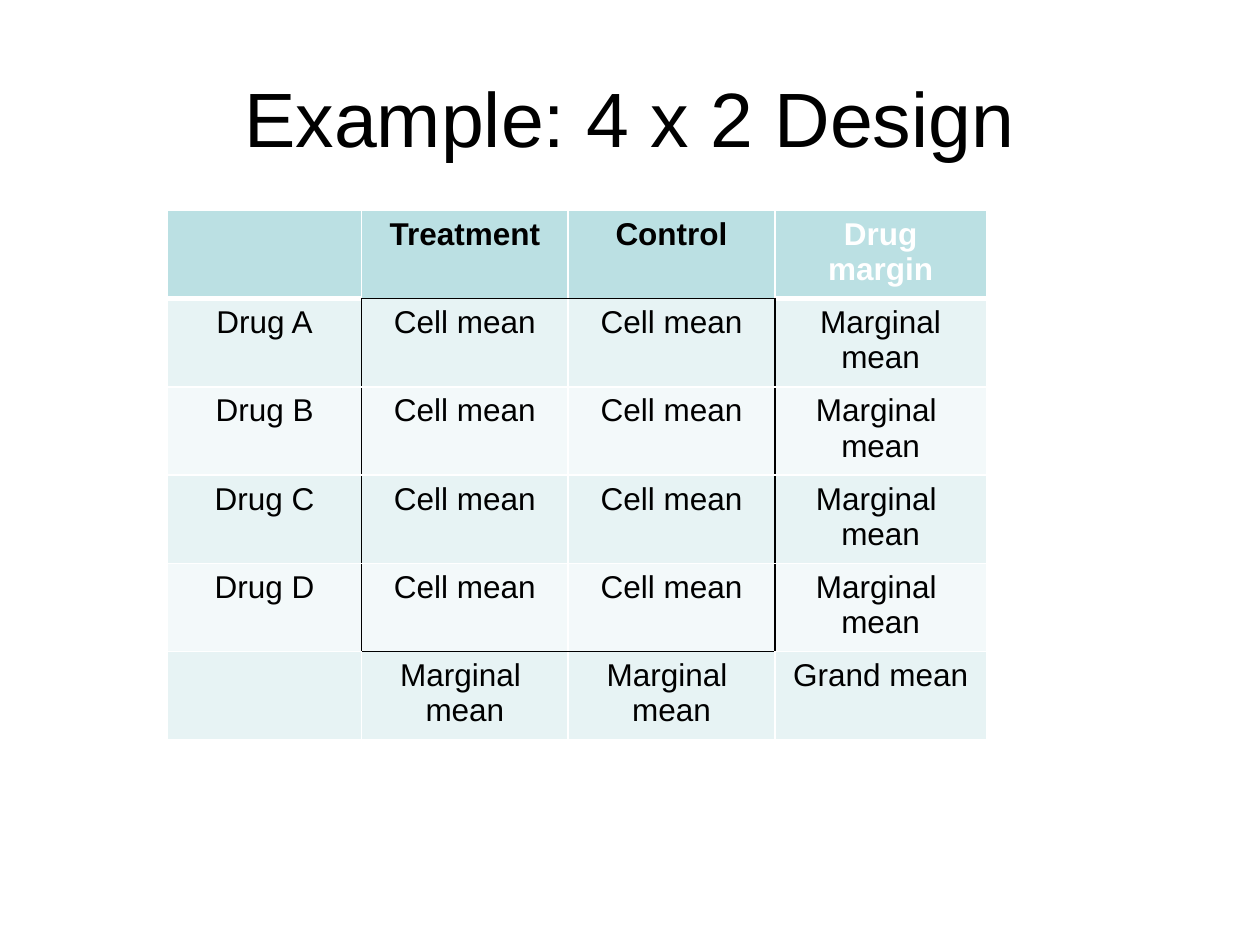
from dataclasses import dataclass

from pptx import Presentation
from pptx.dml.color import RGBColor
from pptx.enum.text import MSO_ANCHOR, PP_ALIGN
from pptx.oxml import parse_xml
from pptx.oxml.ns import nsdecls
from pptx.util import Inches, Pt


@dataclass(frozen=True)
class Theme:
    font: str = "Arial"
    title_size: int = 44
    cell_size: int = 18
    ink: str = "000000"
    white: str = "FFFFFF"
    header: str = "BBE0E3"
    bands: tuple[str, str] = ("E7F3F4", "F3F9FA")
    thin: int = 1
    thick: int = 3


@dataclass(frozen=True)
class Box:
    left: float
    top: float
    width: float
    height: float

    def inches(self) -> list:
        return [Inches(v) for v in (self.left, self.top, self.width, self.height)]


THEME = Theme()
TITLE_BOX = Box(0.5, 0.3, 9, 1.25)
TABLE_BOX = Box(1.33, 1.67, 6.5, 4.14)
COLUMN_WIDTHS = (1.54, 1.64, 1.64, 1.68)
SPLIT_MARGINAL = "Marginal \nmean"
ROWS = [
    ("", "Treatment", "Control", "Drug margin"),
    ("Drug A", "Cell mean", "Cell mean", "Marginal mean"),
    *((f"Drug {letter}", "Cell mean", "Cell mean", SPLIT_MARGINAL) for letter in "BCD"),
    ("", SPLIT_MARGINAL, SPLIT_MARGINAL, "Grand mean"),
]
# Border tags in schema order, with the step to the neighbouring cell
SIDES = {"lnL": (0, -1), "lnR": (0, 1), "lnT": (-1, 0), "lnB": (1, 0)}


def style_paragraph(para, size: int, color: str, bold: bool = False) -> None:
    para.alignment = PP_ALIGN.CENTER
    para.font.name = THEME.font
    para.font.size = Pt(size)
    para.font.bold = bold
    para.font.color.rgb = RGBColor.from_string(color)


def is_cell_mean(row: int, column: int) -> bool:
    return 1 <= row <= 4 and 1 <= column <= 2


def add_borders(cell, row: int, column: int) -> None:
    """Outline the block of cell means in black, everything else in white."""
    properties = cell._tc.get_or_add_tcPr()
    for tag, (down, right) in SIDES.items():
        outline = is_cell_mean(row, column) != is_cell_mean(row + down, column + right)
        color = THEME.ink if outline else THEME.white
        below_header = not outline and (row, tag) in ((0, "lnB"), (1, "lnT"))
        width = THEME.thick if below_header else THEME.thin
        properties.append(parse_xml(
            f'<a:{tag} {nsdecls("a")} w="{Pt(width)}"><a:solidFill>'
            f'<a:srgbClr val="{color}"/></a:solidFill></a:{tag}>'))


def fill_cell(cell, row: int, column: int, text: str) -> None:
    header = row == 0
    cell.text = text
    color = THEME.white if header and column == 3 else THEME.ink
    for para in cell.text_frame.paragraphs:
        style_paragraph(para, THEME.cell_size, color, bold=header)
    add_borders(cell, row, column)
    cell.fill.solid()
    fill = THEME.header if header else THEME.bands[(row - 1) % 2]
    cell.fill.fore_color.rgb = RGBColor.from_string(fill)


def add_title(page, text: str) -> None:
    frame = page.shapes.add_textbox(*TITLE_BOX.inches()).text_frame
    frame.word_wrap = True
    frame.vertical_anchor = MSO_ANCHOR.MIDDLE
    frame.text = text
    style_paragraph(frame.paragraphs[0], THEME.title_size, THEME.ink)


def add_design_table(page) -> None:
    table = page.shapes.add_table(len(ROWS), len(COLUMN_WIDTHS), *TABLE_BOX.inches()).table
    for column, width in zip(table.columns, COLUMN_WIDTHS):
        column.width = Inches(width)
    for row, texts in enumerate(ROWS):
        for column, text in enumerate(texts):
            fill_cell(table.cell(row, column), row, column, text)


def main() -> None:
    deck = Presentation()
    deck.slide_width, deck.slide_height = Inches(10), Inches(7.5)
    page = deck.slides.add_slide(deck.slide_layouts[6])
    add_title(page, "Example: 4 x 2 Design")
    add_design_table(page)
    deck.save("out.pptx")


if __name__ == "__main__":
    main()
